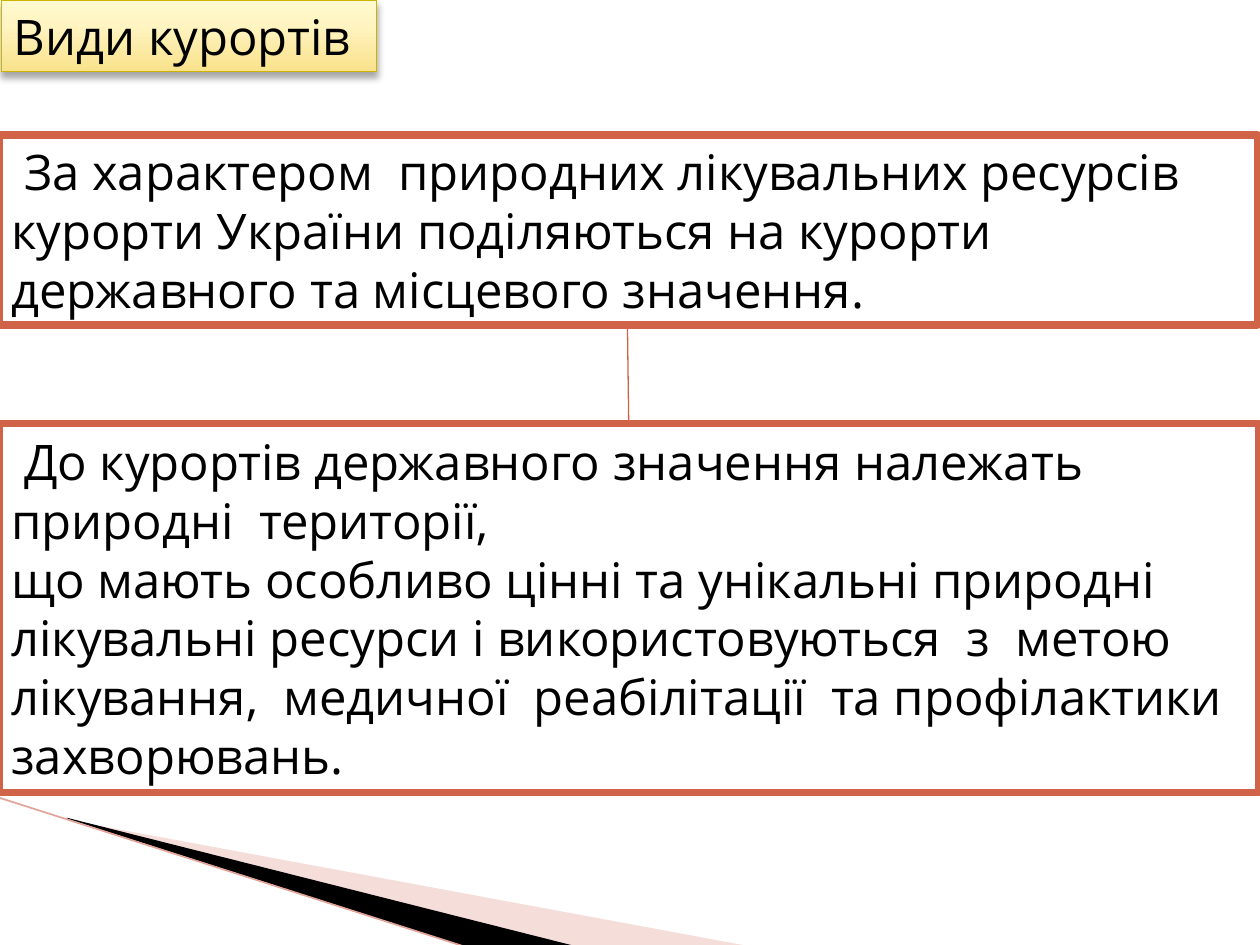
from lxml import etree
from pptx import Presentation, util as u
from pptx.dml.color import RGBColor
from pptx.enum import text
from pptx.oxml import ns, parse_xml

COLORS = {"ink": "000000", "paper": "FFFFFF", "frame": "D16349",
          "gold": "CCB400", "blush": "E6AAA1", "edge": "E3A399"}
GOLD_STOPS = ((0, "F9E28B"), (65, "FFF4C2"), (100, "FFFACF"))
COLUMNS, ROWS = 100, 75


class ResortSlide:
    """Style and current slide; lengths are grid columns and rows."""

    font = {"name": "Open Sans", "size": u.Pt(28), "bold": False}
    frame = {"word_wrap": True, "auto_size": text.MSO_AUTO_SIZE.NONE,
             "margin_left": u.Inches(0.1), "margin_right": u.Inches(0.1),
             "margin_top": u.Inches(0.05), "margin_bottom": u.Inches(0.05),
             "vertical_anchor": text.MSO_ANCHOR.MIDDLE}
    paragraph = {"alignment": text.PP_ALIGN.LEFT, "space_before": u.Pt(0)}

    def __init__(self, deck, layout):
        self.slide = deck.slides.add_slide(deck.slide_layouts[layout])
        self.column = deck.slide_width / COLUMNS
        self.row = deck.slide_height / ROWS

    def point(self, x, y):
        return round(x * self.column), round(y * self.row)

    @staticmethod
    def apply(target, values):
        for key, value in values.items():
            setattr(target, key, value)

    @staticmethod
    def color(name):
        return RGBColor.from_string(COLORS[name])

    def outline(self, item, name, width):
        item.line.color.rgb = self.color(name)
        item.line.width = u.Pt(width)

    def panel(self, index, place, paragraphs, line, width):
        """Fill a placeholder with plain paragraphs and frame it."""
        box = self.slide.placeholders[index]
        box.left, box.top = self.point(*place[:2])
        box.width, box.height = self.point(*place[2:])
        box.fill.solid()
        box.fill.fore_color.rgb = self.color("paper")
        self.outline(box, line, width)
        box.text_frame.text = "\n".join(paragraphs)
        self.apply(box.text_frame, self.frame)
        for part in box.text_frame.paragraphs:
            props = part._p.get_or_add_pPr()
            props.set("marL", "0")
            props.set("indent", "0")
            self.apply(part, self.paragraph)
            etree.SubElement(props, ns.qn("a:buNone"))
            for run in part.runs:
                self.apply(run.font, self.font)
                run.font.color.rgb = self.color("ink")
        return box

    def gild(self, box):
        """Three-stop upward gradient and a soft shadow below."""
        stops = "".join(f'<a:gs pos="{pos * 1000}"><a:srgbClr val="{value}"/></a:gs>'
                        for pos, value in GOLD_STOPS)
        props = box._element.spPr
        plain = props.find(ns.qn("a:solidFill"))
        props.replace(plain, parse_xml(
            f'<a:gradFill {ns.nsdecls("a")} rotWithShape="1"><a:gsLst>{stops}</a:gsLst>'
            '<a:lin ang="16200000" scaled="0"/></a:gradFill>'))
        props.append(parse_xml(
            f'<a:effectLst {ns.nsdecls("a")}><a:outerShdw blurRad="{u.Pt(4)}" '
            f'dist="{u.Pt(3)}" dir="5400000" rotWithShape="0"><a:srgbClr val="000000">'
            '<a:alpha val="35000"/></a:srgbClr></a:outerShdw></a:effectLst>'))

    def wedge(self, corners, fill, opacity=100):
        start, *rest = (self.point(*corner) for corner in corners)
        builder = self.slide.shapes.build_freeform(*start)
        builder.add_line_segments(rest, close=True)
        shape = builder.convert_to_shape()
        shape.shadow.inherit = False
        shape.fill.solid()
        shape.fill.fore_color.rgb = self.color(fill)
        shape.line.fill.background()
        if opacity < 100:
            tint = shape._element.spPr.find(".//" + ns.qn("a:srgbClr"))
            etree.SubElement(tint, ns.qn("a:alpha"), val=str(opacity * 1000))

    def link(self, start, end, color, width):
        line = self.slide.shapes.add_connector(1, *self.point(*start), *self.point(*end))
        self.outline(line, color, width)
        etree.SubElement(line._element.spPr, ns.qn("a:effectLst"))


def main():
    deck = Presentation()
    deck.slide_width, deck.slide_height = u.Inches(10), u.Inches(7.5)
    resorts = ResortSlide(deck, layout=3)

    # Corner ornament
    resorts.wedge([(5.5, 65.1), (59.5, 75.1), (45.6, 75.1), (5.5, 65)], "blush", 40)
    resorts.wedge([(5.3, 64.9), (45.7, 75.1), (37.2, 75.2), (5.4, 65)], "ink")
    resorts.link((-0.1, 63.3), (37.1, 75.2), "edge", 0.95)

    # Heading
    heading = resorts.panel(0, (0.1, 0, 29.8, 5.7), ["Види курортів"], "gold", 0.75)
    resorts.gild(heading)

    # Division of resorts and the state-level group
    resorts.panel(1, (-0.1, 10.7, 99.9, 15.1), [
        " За характером  природних лікувальних ресурсів курорти України "
        "поділяються на курорти державного та місцевого значення."], "frame", 4.33)
    resorts.panel(2, (-0.1, 33.6, 100, 29.3), [
        " До курортів державного значення належать природні  території,",
        "що мають особливо цінні та унікальні природні лікувальні ресурси і "
        "використовуються  з  метою  лікування,  медичної  реабілітації  та "
        "профілактики захворювань."], "frame", 4.33)
    resorts.link((49.9, 33.6), (49.8, 25.9), "frame", 0.75)

    deck.save("out.pptx")


if __name__ == "__main__":
    main()
